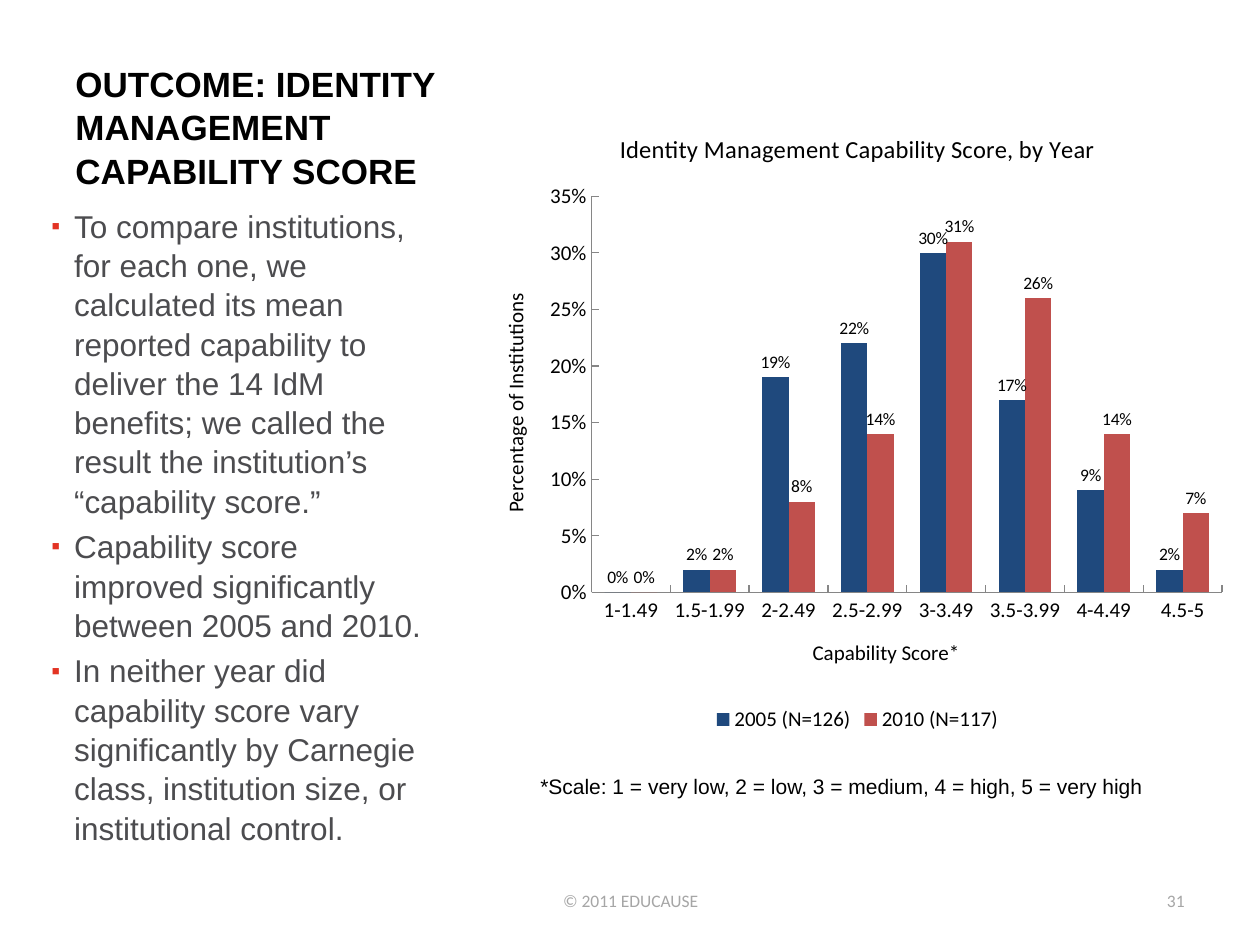
from lxml import etree
from pptx import Presentation
from pptx.chart.data import CategoryChartData
from pptx.dml.color import RGBColor
from pptx.enum.chart import XL_CHART_TYPE as CT, XL_LEGEND_POSITION as LP
from pptx.enum.chart import XL_LABEL_POSITION as LBL, XL_TICK_MARK as TICK
from pptx.enum.text import MSO_ANCHOR as ANCHOR, PP_ALIGN as ALIGN
from pptx.oxml import parse_xml
from pptx.oxml.ns import nsdecls, qn
from pptx.util import Inches, Pt

COLORS = {"black": "000000", "body": "4C4C4F", "bullet": "E33323",
          "footer": "A6A6A6", "axis": "868686",
          "2005": "1F497D", "2010": "C0504D"}
LINE_SPACING = 1.045

TITLE = "OUTCOME: IDENTITY MANAGEMENT CAPABILITY SCORE"
POINTS = [
    "To compare institutions, for each one, we calculated its mean reported "
    "capability to deliver the 14 IdM benefits; we called the result the "
    "institution’s “capability score.”",
    "Capability score improved significantly between 2005 and 2010.",
    "In neither year did capability score vary significantly by Carnegie "
    "class, institution size, or institutional control.",
]
SCORES = ["1-1.49", "1.5-1.99", "2-2.49", "2.5-2.99",
          "3-3.49", "3.5-3.99", "4-4.49", "4.5-5"]
SERIES = [
    ("2005 (N=126)", "2005", [0, 0.02, 0.19, 0.22, 0.30, 0.17, 0.09, 0.02]),
    ("2010 (N=117)", "2010", [0, 0.02, 0.08, 0.14, 0.31, 0.26, 0.14, 0.07]),
]


def rgb(name):
    return RGBColor.from_string(COLORS[name])


def set_font(font, size, color="black", name="Calibri", bold=False):
    font.size, font.name, font.bold = Pt(size), name, bold
    font.color.rgb = rgb(color)


def add_bullet(p):
    pPr = p._p.get_or_add_pPr()
    pPr.set("marL", str(Inches(0.18)))
    pPr.set("indent", str(-Inches(0.18)))
    color = etree.SubElement(pPr, qn("a:buClr"))
    etree.SubElement(color, qn("a:srgbClr"), val=COLORS["bullet"])
    etree.SubElement(pPr, qn("a:buSzPct"), val="80000")
    etree.SubElement(pPr, qn("a:buFont"), typeface="Arial")
    etree.SubElement(pPr, qn("a:buChar"), char="▪")


def add_text(slide, box, paragraphs, size, color="black", name="Arial",
             bold=False, align=ALIGN.LEFT, anchor=ANCHOR.TOP, wrap=True,
             bullets=False, spacing=None):
    tf = slide.shapes.add_textbox(*map(Inches, box)).text_frame
    tf.word_wrap, tf.vertical_anchor = wrap, anchor
    for i, text in enumerate(paragraphs):
        p = tf.add_paragraph() if i else tf.paragraphs[0]
        if bullets:
            add_bullet(p)
        p.alignment, p.line_spacing = align, spacing
        if i:
            p.space_before = Pt(size * 0.2)
        r = p.add_run()
        r.text = text
        set_font(r.font, size, color, name, bold)


def set_title(owner, text, size):
    tf = owner.text_frame
    tf.text = text
    set_font(tf.paragraphs[0].runs[0].font, size)


def set_plot_layout(chart, x, y, w, h):
    """Fix the inner plot area, in fractions of the chart's size."""
    area = chart._chartSpace.chart.plotArea
    for old in area.findall(qn("c:layout")):
        area.remove(old)
    area.insert(0, parse_xml(
        f'<c:layout {nsdecls("c")}><c:manualLayout>'
        '<c:layoutTarget val="inner"/>'
        '<c:xMode val="edge"/><c:yMode val="edge"/>'
        f'<c:x val="{x}"/><c:y val="{y}"/><c:w val="{w}"/><c:h val="{h}"/>'
        '</c:manualLayout></c:layout>'))


def style_axis(axis, title):
    axis.has_major_gridlines = False
    axis.major_tick_mark, axis.minor_tick_mark = TICK.INSIDE, TICK.NONE
    axis.format.line.color.rgb = rgb("axis")
    set_font(axis.tick_labels.font, 12)
    set_title(axis.axis_title, title, 12)


def add_score_chart(slide, box):
    data = CategoryChartData(number_format="0%")
    data.categories = SCORES
    for name, _, values in SERIES:
        data.add_series(name, values)
    chart = slide.shapes.add_chart(
        CT.COLUMN_CLUSTERED, *map(Inches, box), data).chart
    set_font(chart.font, 12)
    set_title(chart.chart_title,
              "Identity Management Capability Score, by Year", 14)
    chart.has_legend = True
    chart.legend.position = LP.BOTTOM
    chart.legend.include_in_layout = False
    set_font(chart.legend.font, 12)

    style_axis(chart.category_axis, "Capability Score*")
    axis = chart.value_axis
    style_axis(axis, "Percentage of Institutions")
    axis.minimum_scale, axis.maximum_scale, axis.major_unit = 0, 0.35, 0.05
    axis.tick_labels.number_format = "0%"
    axis.tick_labels.number_format_is_linked = False

    plot = chart.plots[0]
    plot.gap_width, plot.overlap, plot.vary_by_categories = 100, 0, False
    for series, (_, color, _) in zip(plot.series, SERIES):
        series.format.fill.solid()
        series.format.fill.fore_color.rgb = rgb(color)
        labels = series.data_labels
        labels.show_value, labels.position = True, LBL.OUTSIDE_END
        labels.number_format, labels.number_format_is_linked = "0%", False
        set_font(labels.font, 10)
    set_plot_layout(chart, 0.15, 0.14, 0.83, 0.63)


def add_findings(slide, left, top):
    add_text(slide, (left + 0.19, top, 3.29, 1.27), [TITLE], 20, bold=True,
             anchor=ANCHOR.BOTTOM, spacing=LINE_SPACING)
    add_text(slide, (left, top + 1.28, 3.13, 5.37), POINTS, 18, "body",
             bullets=True, spacing=LINE_SPACING)


def add_chart_region(slide, left, top):
    add_score_chart(slide, (left, top, 6.03, 4.99))
    add_text(slide, (left + 0.4, top + 5.23, 5.03, 0.3),
             ["*Scale: 1 = very low, 2 = low, 3 = medium, 4 = high, "
              "5 = very high"], 12, wrap=False)


def add_footer(slide, top):
    for left, width, text, align in [
            (3.42, 3.17, "© 2011 EDUCAUSE", ALIGN.CENTER),
            (7.17, 2.33, "31", ALIGN.RIGHT)]:
        add_text(slide, (left, top, width, 0.4), [text], 10, "footer",
                 "Calibri", align=align, anchor=ANCHOR.MIDDLE)


def main():
    prs = Presentation()
    prs.slide_width, prs.slide_height = Inches(10), Inches(7.5)
    slide = prs.slides.add_slide(prs.slide_layouts[6])
    add_findings(slide, 0.31, 0.3)
    add_chart_region(slide, 3.79, 0.86)
    add_footer(slide, 6.95)
    prs.save("out.pptx")


if __name__ == "__main__":
    main()
